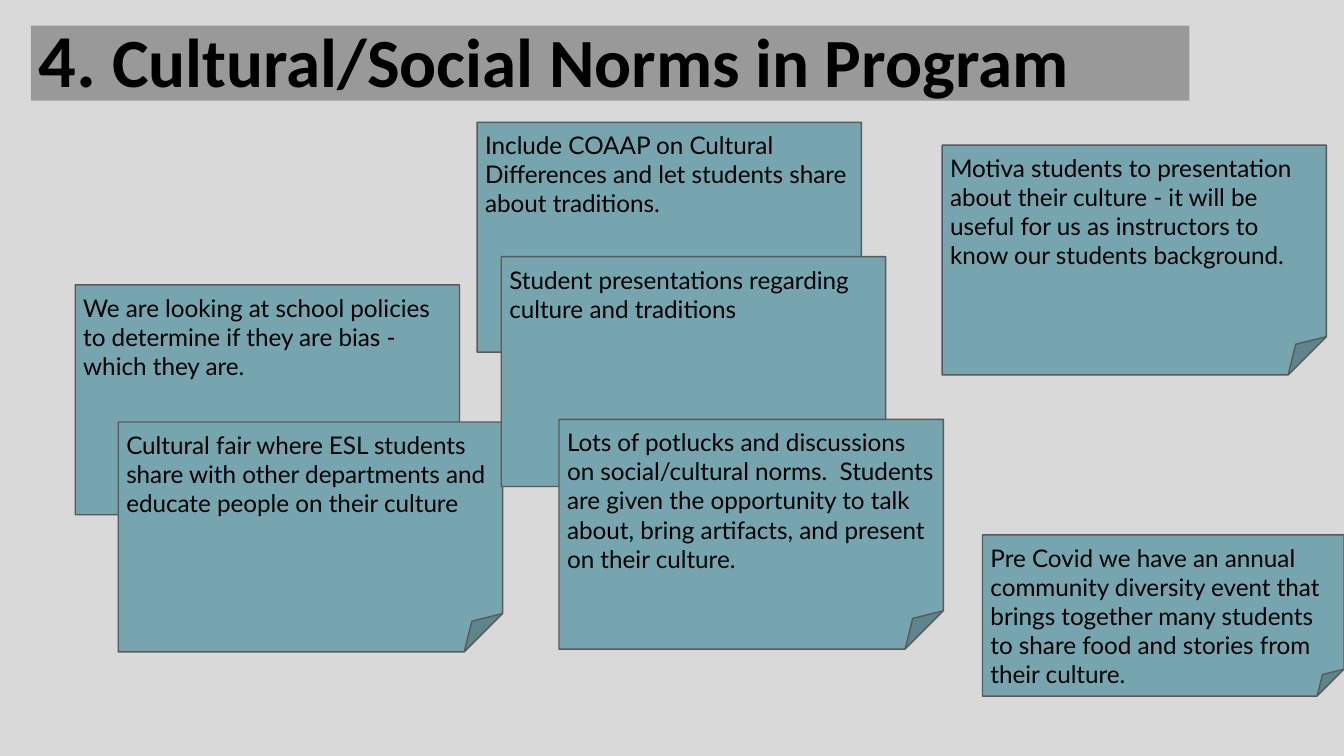
import pptx
import pptx.dml.color
import pptx.enum.shapes
import pptx.enum.text
import pptx.util
from dataclasses import dataclass
from pptx.util import Inches


@dataclass(frozen=True)
class Theme:
    background: str = "D9D9D9"
    banner: str = "999999"
    note: str = "76A5AF"
    outline: str = "595959"
    text: str = "000000"
    title_font: str = "Calibri"
    note_font: str = "Lato"
    number_size: int = 40
    title_size: int = 37
    note_size: int = 13


theme = Theme()


def paint(fill, color):
    """Make a fill solid in the given hex colour."""
    fill.solid()
    fill.fore_color.rgb = pptx.dml.color.RGBColor.from_string(color)


def write(box, spans, font, bold=False, spacing=1.0,
          anchor=pptx.enum.text.MSO_ANCHOR.TOP):
    """Fill a box with one paragraph of (text, size) spans."""
    frame = box.text_frame
    frame.word_wrap = True
    frame.auto_size = pptx.enum.text.MSO_AUTO_SIZE.NONE
    frame.vertical_anchor = anchor
    frame.margin_left = frame.margin_right = Inches(0.06)
    frame.margin_top = frame.margin_bottom = Inches(0.06)
    para = frame.paragraphs[0]
    para.alignment = pptx.enum.text.PP_ALIGN.LEFT
    para.line_spacing = spacing
    for text, size in spans:
        span = para.add_run()
        span.text = text
        span.font.name = font
        span.font.size = pptx.util.Pt(size)
        span.font.bold = bold
        paint(span.font.fill, theme.text)


deck = pptx.Presentation()
deck.slide_width = Inches(10)
deck.slide_height = Inches(10 * 9 / 16)
page = deck.slides.add_slide(deck.slide_layouts.get_by_name("Title Only"))
paint(page.background.fill, theme.background)

title = page.shapes.title
title.left, title.top = Inches(0.23), Inches(0.19)
title.width, title.height = Inches(8.62), Inches(0.56)
paint(title.fill, theme.banner)
write(title,
      [("4.", theme.number_size),
       (" Cultural/Social Norms in Program", theme.title_size)],
      font=theme.title_font, bold=True, spacing=0.9,
      anchor=pptx.enum.text.MSO_ANCHOR.MIDDLE)

# Sticky notes from back to front: left, top, (width, height), text
standard, small = (2.86, 1.71), (2.69, 1.2)
notes = [
    (0.56, 2.12, standard,
     "We are looking at school policies to determine if they are bias - "
     "which they are."),
    (0.88, 3.14, standard,
     "Cultural fair where ESL students share with other departments and "
     "educate people on their culture"),
    (3.55, 0.91, standard,
     "Include COAAP on Cultural Differences and let students share about "
     "traditions."),
    (7.31, 3.98, small,
     "Pre Covid we have an annual community diversity event that brings "
     "together many students to share food and stories from their culture."),
    (3.73, 1.91, standard,
     "Student presentations regarding culture and traditions"),
    (7.01, 1.08, standard,
     "Motiva students to presentation about their culture - it will be "
     "useful for us as instructors to know our students background."),
    (4.16, 3.12, standard,
     "Lots of potlucks and discussions on social/cultural norms.  Students "
     "are given the opportunity to talk about, bring artifacts, and present "
     "on their culture."),
]
for left, top, (width, height), text in notes:
    note = page.shapes.add_shape(
        pptx.enum.shapes.MSO_SHAPE.FOLDED_CORNER,
        Inches(left), Inches(top), Inches(width), Inches(height))
    note.shadow.inherit = False
    paint(note.fill, theme.note)
    paint(note.line.fill, theme.outline)
    note.line.width = pptx.util.Pt(0.75)
    write(note, [(text, theme.note_size)], font=theme.note_font)

deck.save("out.pptx")
